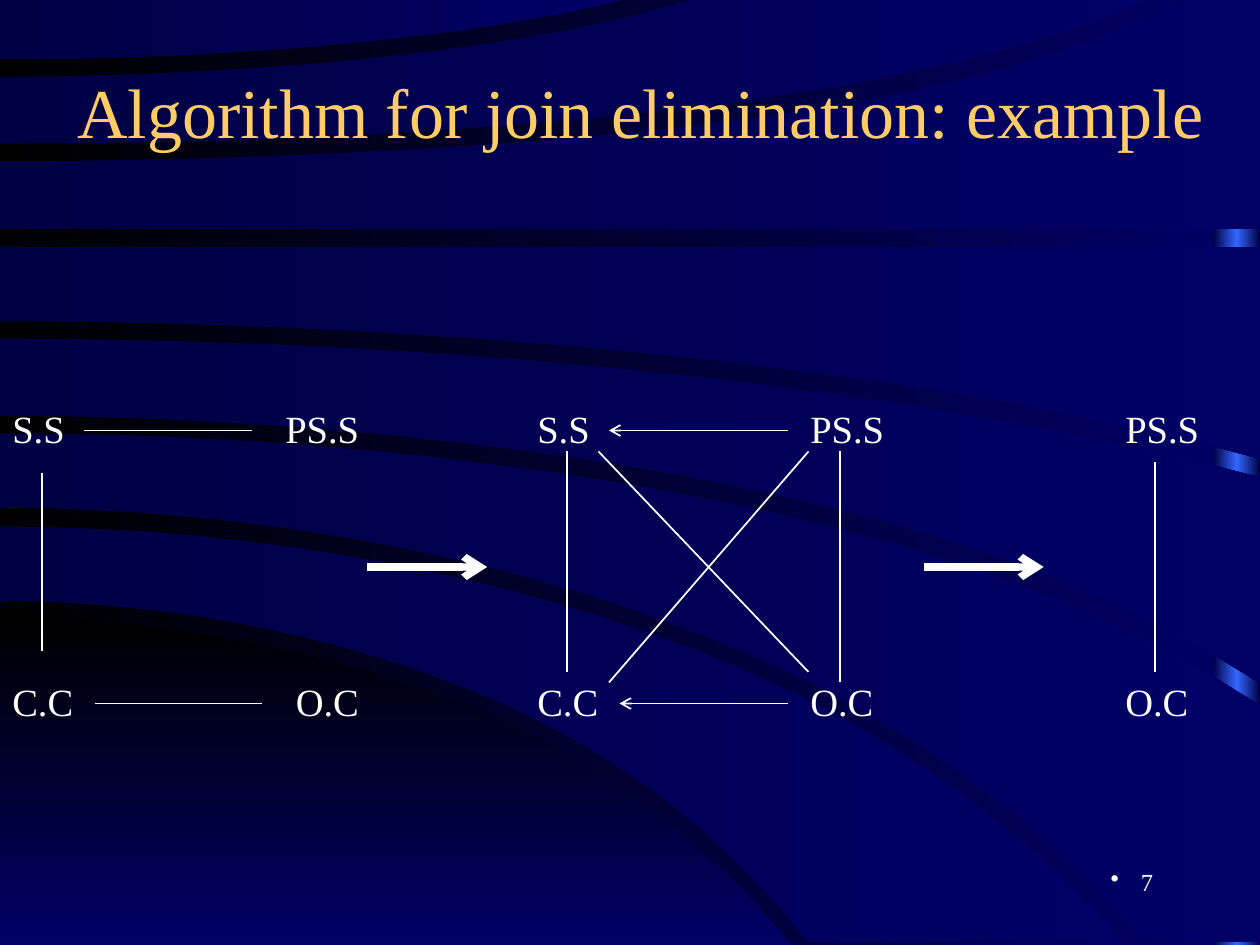
import copy
from dataclasses import dataclass
from typing import Optional

import pptx
import pptx.dml.color
import pptx.enum.shapes
import pptx.enum.text
import pptx.oxml
import pptx.oxml.ns
import pptx.util
from lxml import etree

COLORS = {"black": "000000", "navy": "000066", "dusk": "000044",
          "glow": "3366FF", "white": "FFFFFF", "title": "FFCC66"}
FONT = "Times New Roman"
WIDTH, HEIGHT = pptx.util.Inches(10), pptx.util.Inches(7.5)
COLUMNS = 120  # diagram grid, with square cells
CELL = WIDTH / COLUMNS
CURVE_SCALE = 1000  # curve units per inch
CURVE_STEPS = 24
RIGHT, TOP, BOTTOM = 10, -0.02, 7.48  # limits of the bands, inches
Point = tuple[float, float]


@dataclass
class Edge:
    """A curve that leaves the left side level and bends towards its end."""
    start: float
    end: Point
    bend: float = 0.74

    def points(self) -> list[Point]:
        end_x, end_y = self.end
        shares = [step / CURVE_STEPS for step in range(CURVE_STEPS + 1)]
        return [(end_x * u, self.start + (end_y - self.start)
                 * (self.bend * u ** 2 + (1 - self.bend) * u ** 6)) for u in shares]


@dataclass
class Band:
    upper: Edge
    lower: Edge
    corner: Optional[Point] = None
    colors: tuple[str, ...] = ("dusk", "navy")
    angle: int = 0


@dataclass
class Link:
    start: Point
    end: Point
    arrow: bool = False
    weight: float = 1


BANDS = [
    # Dark hill in the lower left corner
    Band(Edge(4.91, (6.28, 7.5)), Edge(7.5, (6.28, 7.5)), colors=("black", "navy"), angle=270),
    # Sweeping bands, from the bottom up
    Band(Edge(4.18, (8.93, BOTTOM)), Edge(4.77, (6.42, BOTTOM))),
    Band(Edge(3.44, (RIGHT, 5.6)), Edge(4.03, (9.09, BOTTOM)), corner=(RIGHT, BOTTOM)),
    Band(Edge(2.69, (RIGHT, 3.79), 0.89), Edge(3.3, (RIGHT, 5.42))),
    Band(Edge(1.96, (RIGHT, 1.96)), Edge(2.55, (RIGHT, 3.64), 0.87)),
    Band(Edge(1.28, (9.43, TOP), 0.58), Edge(1.82, (RIGHT, 1.82)), corner=(RIGHT, TOP)),
    Band(Edge(0.61, (5.56, TOP), 0.81), Edge(1.14, (9.17, TOP), 0.65)),
    Band(Edge(TOP, (5.01, TOP)), Edge(0.47, (5.01, TOP), 0.84)),
]

# Join graph: labels on two rows, three stages from left to right
UPPER, LOWER = 38, 64
LABEL_WIDTHS = {"S.S": 7.4, "C.C": 8.2, "O.C": 8.4, "PS.S": 9.5}
LABEL_COLUMNS = {
    UPPER: [("S.S", 0), ("PS.S", 26), ("S.S", 50), ("PS.S", 76), ("PS.S", 106)],
    LOWER: [("C.C", 0), ("O.C", 27), ("C.C", 50), ("O.C", 76), ("O.C", 106)],
}
UPPER_LINK, LOWER_LINK = UPPER + 3, LOWER + 3
UNDER = UPPER + 5  # just below the upper labels
LINKS = [
    # First stage
    Link((4, 45), (4, 62)),
    Link((8, UPPER_LINK), (24, UPPER_LINK)),
    Link((9, LOWER_LINK), (25, LOWER_LINK)),
    # Second stage
    Link((75, UPPER_LINK), (58, UPPER_LINK), arrow=True),
    Link((75, LOWER_LINK), (59, LOWER_LINK), arrow=True),
    Link((54, UNDER), (54, LOWER)),
    Link((80, UNDER), (80, LOWER + 1)),
    Link((57, UNDER), (77, LOWER)),
    Link((77, UNDER), (58, LOWER + 1)),
    # Third stage
    Link((110, UNDER + 1), (110, LOWER)),
    # Steps between the stages
    *(Link((column, 54), (column + 11.4, 54), arrow=True, weight=4.25) for column in (35, 88)),
]


def rgb(name: str) -> pptx.dml.color.RGBColor:
    return pptx.dml.color.RGBColor.from_string(COLORS[name])


def fill_gradient(fill, names: tuple[str, ...], angle: int = 0) -> None:
    fill.gradient()
    fill.gradient_angle = angle
    first = fill.gradient_stops[0]._gs
    for _ in names[2:]:
        first.addnext(copy.deepcopy(first))
    for index, (stop, name) in enumerate(zip(fill.gradient_stops, names)):
        stop.color.rgb = rgb(name)
        stop.position = index / (len(names) - 1)


def draw_band(page, band: Band) -> None:
    corners = [band.corner] if band.corner else []
    outline = [*band.upper.points(), *corners, *reversed(band.lower.points())]
    points = [(x * CURVE_SCALE, y * CURVE_SCALE) for x, y in outline]
    builder = page.shapes.build_freeform(*points[0], scale=pptx.util.Inches(1) / CURVE_SCALE)
    builder.add_line_segments(points[1:], close=True)
    shape = builder.convert_to_shape()
    shape.shadow.inherit = False
    shape.line.fill.background()
    fill_gradient(shape.fill, band.colors, band.angle)


def draw_text(page, text: str, column: float, row: float, width: float, height: float,
              size: float, color: str = "white", wrap: bool = True):
    box = page.shapes.add_textbox(*(round(n * CELL) for n in (column, row, width, height)))
    box.text_frame.text = text
    box.text_frame.word_wrap = wrap
    span = box.text_frame.paragraphs[0].runs[0]
    span.font.name, span.font.size = FONT, pptx.util.Pt(size)
    span.font.color.rgb = rgb(color)
    return box


def draw_link(page, link: Link) -> None:
    ends = [round(n * CELL) for n in (*link.start, *link.end)]
    line = page.shapes.add_connector(pptx.enum.shapes.MSO_CONNECTOR.STRAIGHT, *ends)
    line.line.color.rgb = rgb("white")
    line.line.width = pptx.util.Pt(link.weight)
    if link.arrow:
        etree.SubElement(line.line._get_or_add_ln(), pptx.oxml.ns.qn("a:tailEnd"), type="arrow")
    etree.SubElement(line._element.spPr, pptx.oxml.ns.qn("a:effectLst"))


def main() -> None:
    deck = pptx.Presentation()
    deck.slide_width, deck.slide_height = WIDTH, HEIGHT
    page = deck.slides.add_slide(deck.slide_layouts[6])

    # Background: gradient, glowing right edge, bands
    fill_gradient(page.background.fill, ("black", "navy"))
    glow_width = round(WIDTH * 0.037)
    glow = page.shapes.add_shape(pptx.enum.shapes.MSO_SHAPE.RECTANGLE,
                                 WIDTH - glow_width, 0, glow_width, HEIGHT)
    glow.shadow.inherit = False
    glow.line.fill.background()
    fill_gradient(glow.fill, ("dusk", "glow", "dusk"))
    for band in BANDS:
        draw_band(page, band)

    # Title
    title = draw_text(page, "Algorithm for join elimination: example", -2, 3, 126, 15, 40, "title")
    title.text_frame.vertical_anchor = pptx.enum.text.MSO_ANCHOR.MIDDLE
    title.text_frame.paragraphs[0].alignment = pptx.enum.text.PP_ALIGN.CENTER

    # Join graph
    for row, labels in LABEL_COLUMNS.items():
        for text, column in labels:
            draw_text(page, text, column, row, LABEL_WIDTHS[text], 5.6, 22, wrap=False)
    for link in LINKS:
        draw_link(page, link)

    # Bulleted page number
    number = draw_text(page, "7", 86, 82, 25, 6, 14)
    para = number.text_frame.paragraphs[0]
    para.alignment = pptx.enum.text.PP_ALIGN.RIGHT
    settings = para._p.get_or_add_pPr()
    indent = pptx.util.Inches(0.24)
    settings.set("marL", str(indent))
    settings.set("indent", str(-indent))
    etree.SubElement(settings, pptx.oxml.ns.qn("a:buChar"), char="•")

    deck.save("out.pptx")


if __name__ == "__main__":
    main()
